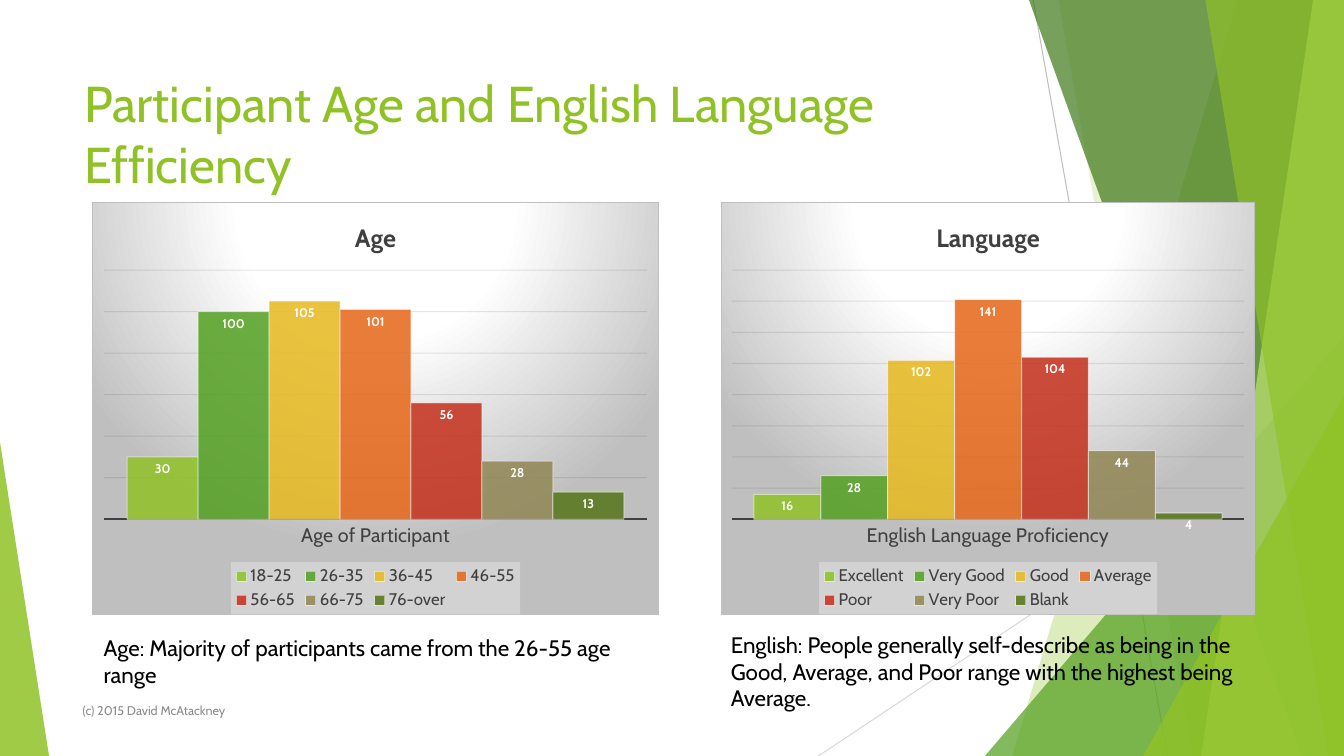
from pptx import Presentation
from pptx.chart.data import CategoryChartData
from pptx.dml.color import RGBColor
from pptx.enum.chart import XL_CHART_TYPE, XL_LABEL_POSITION, XL_LEGEND_POSITION, XL_TICK_MARK
from pptx.enum.shapes import MSO_CONNECTOR, MSO_SHAPE
from pptx.enum.text import MSO_ANCHOR
from pptx.oxml import parse_xml
from pptx.oxml.ns import nsdecls
from pptx.util import Pt

FONT = "Cabin"
WIDTH, HEIGHT = 960, 540
COLOURS = {
    "lime": "90C226", "green": "54A021", "forest": "3F7819", "pale": "C0E474",
    "yellow": "E6B91E", "orange": "E76618", "red": "C42F1A", "khaki": "918655",
    "olive": "567417", "white": "FFFFFF", "black": "000000", "ink": "404040",
    "grid": "0D0D0D", "border": "BFBFBF", "hairline": "D9D9D9",
    "legend": "F2F2F2", "footer": "8C8C8C",
}
SERIES_COLOURS = ["lime", "green", "yellow", "orange", "red", "khaki", "olive"]
AGES = {"18-25": 30, "26-35": 100, "36-45": 105, "46-55": 101,
        "56-65": 56, "66-75": 28, "76-over": 13}
LEVELS = {"Excellent": 16, "Very Good": 28, "Good": 102, "Average": 141,
          "Poor": 104, "Very Poor": 44, "Blank": 4}


def rgb(name):
    return RGBColor.from_string(COLOURS[name])


def set_opacity(element, path, percent):
    """Set the opacity of every colour element that the path finds."""
    for colour in element.xpath(path):
        colour.append(parse_xml(f'<a:alpha {nsdecls("a")} val="{percent * 1000}"/>'))


def style_font(font, size, colour, bold=False):
    font.name, font.size, font.bold = FONT, Pt(size), bold
    font.color.rgb = rgb(colour)


def style_line(line, colour, width):
    line.color.rgb = rgb(colour)
    line.width = Pt(width)


def paint_facet(shape, colour, opacity):
    shape.shadow.inherit = False
    shape.fill.solid()
    shape.fill.fore_color.rgb = rgb(colour)
    shape.line.fill.background()
    set_opacity(shape.element, "./p:spPr/a:solidFill/a:srgbClr", opacity)


def add_hairline(slide, start, end, colour):
    line = slide.shapes.add_connector(MSO_CONNECTOR.STRAIGHT, *map(Pt, start + end))
    style_line(line.line, colour, 0.75)
    line.element.spPr.append(parse_xml(f'<a:effectLst {nsdecls("a")}/>'))


def add_band(slide, top_left, bottom_left, colour, opacity):
    """Fill from a slanted left edge to the right edge of the slide."""
    builder = slide.shapes.build_freeform(top_left, 0, scale=Pt(1))
    builder.add_line_segments([(WIDTH, 0), (WIDTH, HEIGHT), (bottom_left, HEIGHT)])
    paint_facet(builder.convert_to_shape(), colour, opacity)


def add_corner(slide, left, width, height, apex, colour, opacity):
    """Stand a right-angled triangle on the bottom of the slide."""
    shape = slide.shapes.add_shape(MSO_SHAPE.ISOSCELES_TRIANGLE, Pt(left),
                                   Pt(HEIGHT - height), Pt(width), Pt(height))
    shape.adjustments[0] = apex
    paint_facet(shape, colour, opacity)


def add_backdrop(slide):
    add_hairline(slide, (738, 0), (834, HEIGHT), "border")
    add_hairline(slide, (WIDTH, 290), (584.6, HEIGHT), "hairline")
    add_band(slide, 884, 723, "lime", 30)
    add_band(slide, 756, 852, "lime", 20)
    add_corner(slide, 703.5, 256.5, 300, 1, "green", 72)
    add_band(slide, 735, 929.5, "forest", 70)
    add_band(slide, 938, 858, "pale", 70)
    add_band(slide, 861, 949, "lime", 65)
    add_corner(slide, 816.5, 143.5, 257, 1, "lime", 80)
    add_corner(slide, 0, 35, 224, 0, "lime", 85)


def add_text(slide, box, text, size, colour, anchor=MSO_ANCHOR.TOP):
    frame = slide.shapes.add_textbox(*map(Pt, box)).text_frame
    frame.word_wrap = True
    frame.vertical_anchor = anchor
    paragraph = frame.paragraphs[0]
    paragraph.text = text
    style_font(paragraph.font, size, colour)


def add_chart_backgrounds(chart):
    """Add the radial chart fill, the legend panel and the plot position."""
    space = chart.element
    stops = "".join(
        f'<a:gs pos="{position * 1000}"><a:srgbClr val="{COLOURS[name]}"/></a:gs>'
        for position, name in [(0, "white"), (39, "white"), (100, "border")])
    space.xpath("./c:chart")[0].addnext(parse_xml(
        f'<c:spPr {nsdecls("c", "a")}><a:gradFill><a:gsLst>{stops}</a:gsLst>'
        '<a:path path="circle"><a:fillToRect l="50000" t="-80000" r="50000" b="180000"/>'
        '</a:path></a:gradFill><a:ln w="9525"><a:solidFill>'
        f'<a:srgbClr val="{COLOURS["border"]}"/></a:solidFill></a:ln></c:spPr>'))
    space.xpath(".//c:legend/c:txPr")[0].addprevious(parse_xml(
        f'<c:spPr {nsdecls("c", "a")}><a:solidFill><a:srgbClr val="{COLOURS["legend"]}">'
        '<a:alpha val="39000"/></a:srgbClr></a:solidFill></c:spPr>'))
    plot_area = space.xpath(".//c:plotArea")[0]
    for layout in plot_area.xpath("./c:layout"):
        plot_area.remove(layout)
    fractions = {"x": 0.02, "y": 0.165, "w": 0.96, "h": 0.605}
    places = "".join(f'<c:{key} val="{value}"/>' for key, value in fractions.items())
    plot_area.insert(0, parse_xml(
        f'<c:layout {nsdecls("c")}><c:manualLayout><c:layoutTarget val="inner"/>'
        f'<c:xMode val="edge"/><c:yMode val="edge"/>{places}</c:manualLayout></c:layout>'))


def style_series(series, colour):
    series.format.fill.solid()
    series.format.fill.fore_color.rgb = rgb(colour)
    style_line(series.format.line, "white", 0.75)
    labels = series.data_labels
    labels.show_value = True
    labels.position = XL_LABEL_POSITION.INSIDE_END
    style_font(labels.font, 9, "white", bold=True)


def add_survey_chart(slide, box, title, category, counts, maximum):
    data = CategoryChartData()
    data.categories = [category]
    for name, count in counts.items():
        data.add_series(name, [count])
    chart = slide.shapes.add_chart(
        XL_CHART_TYPE.COLUMN_CLUSTERED, *map(Pt, box), data).chart
    style_font(chart.font, 10, "black")

    paragraph = chart.chart_title.text_frame.paragraphs[0]
    paragraph.text = title
    style_font(paragraph.font, 18, "ink", bold=True)

    chart.has_legend = True
    chart.legend.position = XL_LEGEND_POSITION.BOTTOM
    chart.legend.include_in_layout = False
    style_font(chart.legend.font, 12, "ink")

    category_axis, value_axis = chart.category_axis, chart.value_axis
    category_axis.major_tick_mark = XL_TICK_MARK.NONE
    style_font(category_axis.tick_labels.font, 14, "ink")
    style_line(category_axis.format.line, "ink", 1.5)
    value_axis.visible = False
    value_axis.minimum_scale, value_axis.maximum_scale = 0, maximum
    value_axis.major_unit = 20
    style_line(value_axis.major_gridlines.format.line, "grid", 0.75)

    plot = chart.plots[0]
    plot.vary_by_categories = False
    plot.gap_width, plot.overlap = 65, 0
    for series, colour in zip(plot.series, SERIES_COLOURS):
        style_series(series, colour)
    set_opacity(chart.element, ".//c:ser/c:spPr/a:solidFill/a:srgbClr", 85)
    set_opacity(chart.element, ".//c:ser/c:spPr/a:ln/a:solidFill/a:srgbClr", 50)
    set_opacity(chart.element, ".//c:majorGridlines//a:srgbClr", 10)
    add_chart_backgrounds(chart)


def build_survey_slide(presentation):
    slide = presentation.slides.add_slide(presentation.slide_layouts[6])
    add_backdrop(slide)
    add_text(slide, (53.3, 48, 677, 104),
             "Participant Age and English Language Efficiency", 36, "lime")
    add_survey_chart(slide, (66, 144, 404.6, 295), "Age", "Age of Participant", AGES, 120)
    add_survey_chart(slide, (515, 144, 381.6, 295), "Language",
                     "English Language Proficiency", LEVELS, 160)
    add_text(slide, (67, 449.3, 404, 87),
             "Age: Majority of participants came from the 26-55 age range", 16, "black")
    add_text(slide, (515, 447, 381.6, 65.5),
             "English: People generally self-describe as being in the Good, Average, "
             "and Poor range with the highest being Average.", 16, "black")
    add_text(slide, (52, 493, 496, 29), "(c) 2015 David McAtackney", 9, "footer",
             MSO_ANCHOR.MIDDLE)


def main():
    presentation = Presentation()
    presentation.slide_width, presentation.slide_height = Pt(WIDTH), Pt(HEIGHT)
    build_survey_slide(presentation)
    presentation.save("out.pptx")


if __name__ == "__main__":
    main()
